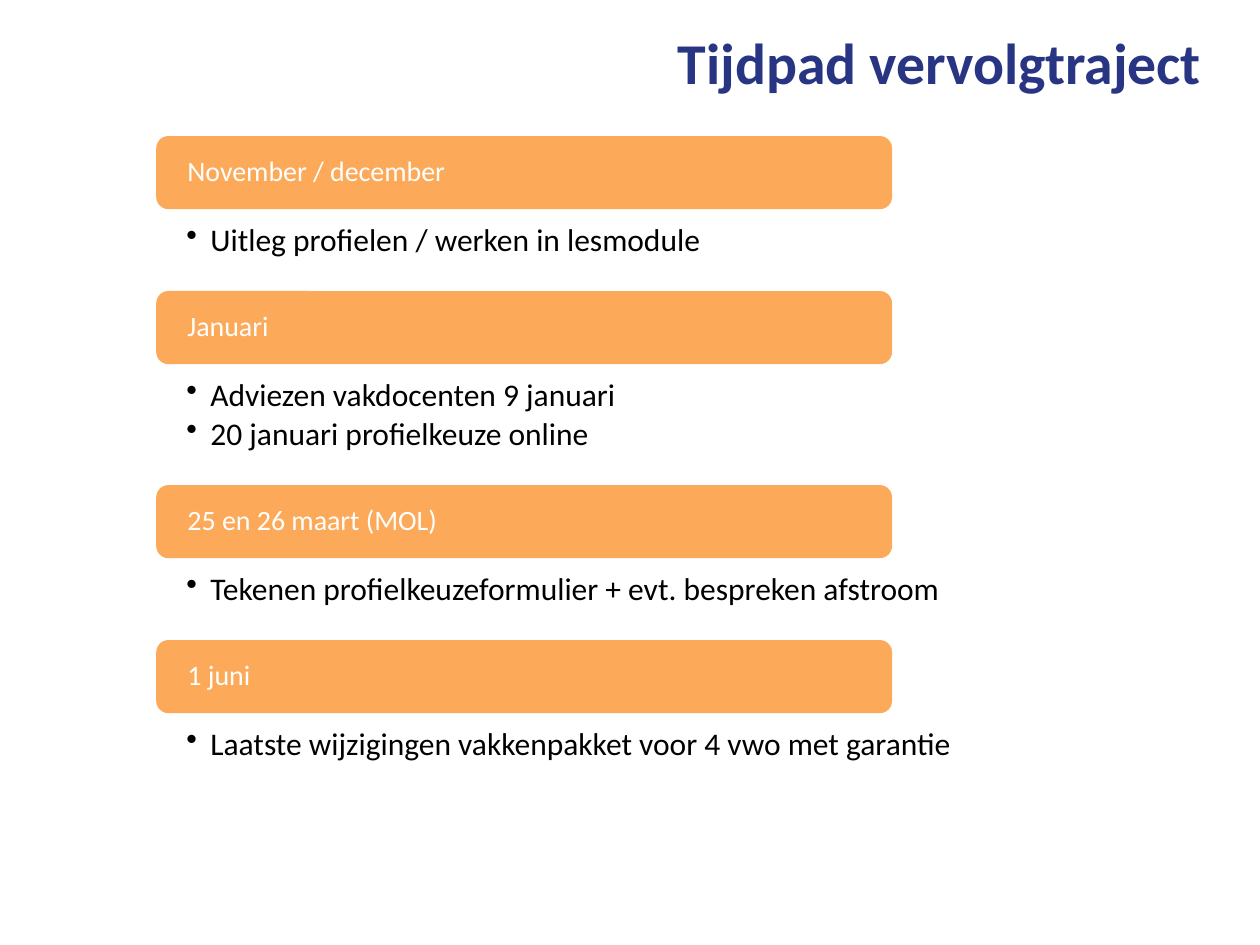
"""Builds the slide with the timeline of the follow-up steps."""
from lxml import etree
from pptx import Presentation
from pptx.dml.color import RGBColor
from pptx.enum.shapes import MSO_SHAPE
from pptx.enum.text import MSO_ANCHOR, PP_ALIGN
from pptx.oxml.ns import qn
from pptx.util import Inches, Pt

RECTANGLE, ROUNDED = MSO_SHAPE.RECTANGLE, MSO_SHAPE.ROUNDED_RECTANGLE
TOP, MIDDLE = MSO_ANCHOR.TOP, MSO_ANCHOR.MIDDLE
LEFT = PP_ALIGN.LEFT
NAVY = RGBColor(0x28, 0x35, 0x83)
ORANGE = RGBColor(0xFC, 0xAA, 0x59)
WHITE = RGBColor(0xFF, 0xFF, 0xFF)
BLACK = RGBColor(0x00, 0x00, 0x00)

TITLE = "Tijdpad vervolgtraject"
STEPS = [
    ("November / december", ["Uitleg profielen / werken in lesmodule"]),
    ("Januari", ["Adviezen vakdocenten 9 januari", "20 januari profielkeuze online"]),
    ("25 en 26 maart (MOL)", ["Tekenen profielkeuzeformulier + evt. bespreken afstroom"]),
    ("1 juni", ["Laatste wijzigingen vakkenpakket voor 4 vwo met garantie"]),
]

TITLE_FONT = {"name": "Calibri", "size": Pt(33), "bold": True}
BAR_FONT = {"name": "Calibri", "size": Pt(16)}
ITEM_FONT = {"name": "Calibri", "size": Pt(18)}
BAR_FRAME = {"margin_left": Inches(0.22), "margin_right": Inches(0.22),
             "margin_top": 0, "margin_bottom": 0, "vertical_anchor": MIDDLE}
PANEL_FRAME = {"margin_left": Inches(0.65), "margin_right": Inches(0.65),
               "margin_top": Inches(0.41), "margin_bottom": Inches(0.14),
               "vertical_anchor": TOP}

FIRST_TOP, PANEL_GAP = 1.37, 0.39
PANEL_LEFT, PANEL_WIDTH, PANEL_BASE, LINE_HEIGHT = 0.83, 8.35, 0.53, 0.31
BAR_LEFT, BAR_WIDTH, BAR_HEIGHT = 1.24, 5.84, 0.58
BULLET_INDENT = 0.19


def set_all(target, values):
    for name, value in values.items():
        setattr(target, name, value)


def format_paragraph(para, font, color):
    set_all(para, {"alignment": LEFT, "line_spacing": 0.9})
    set_all(para.font, font)
    para.font.color.rgb = color


def add_bullet(para):
    properties = para._p.get_or_add_pPr()
    properties.set("marL", str(Inches(BULLET_INDENT)))
    properties.set("indent", str(-Inches(BULLET_INDENT)))
    etree.SubElement(properties, qn("a:buChar"), char="•")


def add_box(page, kind, place, fill, frame_format):
    box = page.shapes.add_shape(kind, *map(Inches, place))
    box.shadow.inherit = False
    box.fill.solid()
    box.fill.fore_color.rgb = fill
    box.line.fill.background()
    box.text_frame.word_wrap = True
    set_all(box.text_frame, frame_format)
    return box.text_frame


def add_step(page, top, height, heading, items):
    panel = add_box(page, RECTANGLE, (PANEL_LEFT, top, PANEL_WIDTH, height), WHITE, PANEL_FRAME)
    panel.text = "\n".join(items)
    for para in panel.paragraphs:
        add_bullet(para)
        format_paragraph(para, ITEM_FONT, BLACK)
        para.space_after = Pt(2.7)
    bar_place = (BAR_LEFT, top - BAR_HEIGHT / 2, BAR_WIDTH, BAR_HEIGHT)
    bar = add_box(page, ROUNDED, bar_place, ORANGE, BAR_FRAME)
    bar.text = heading
    format_paragraph(bar.paragraphs[0], BAR_FONT, WHITE)


def main():
    deck = Presentation()
    deck.slide_width, deck.slide_height = Inches(10), Inches(7.5)
    page = deck.slides.add_slide(deck.slide_layouts[5])

    title = page.shapes.title
    set_all(title, {"left": Inches(5.28), "top": Inches(-0.2),
                    "width": Inches(8.62), "height": Inches(1.45)})
    title.text_frame.text = TITLE
    title.text_frame.vertical_anchor = MIDDLE
    format_paragraph(title.text_frame.paragraphs[0], TITLE_FONT, NAVY)

    top = FIRST_TOP
    for heading, items in STEPS:
        height = PANEL_BASE + LINE_HEIGHT * len(items)
        add_step(page, top, height, heading, items)
        top += height + PANEL_GAP

    deck.save("out.pptx")


if __name__ == "__main__":
    main()
